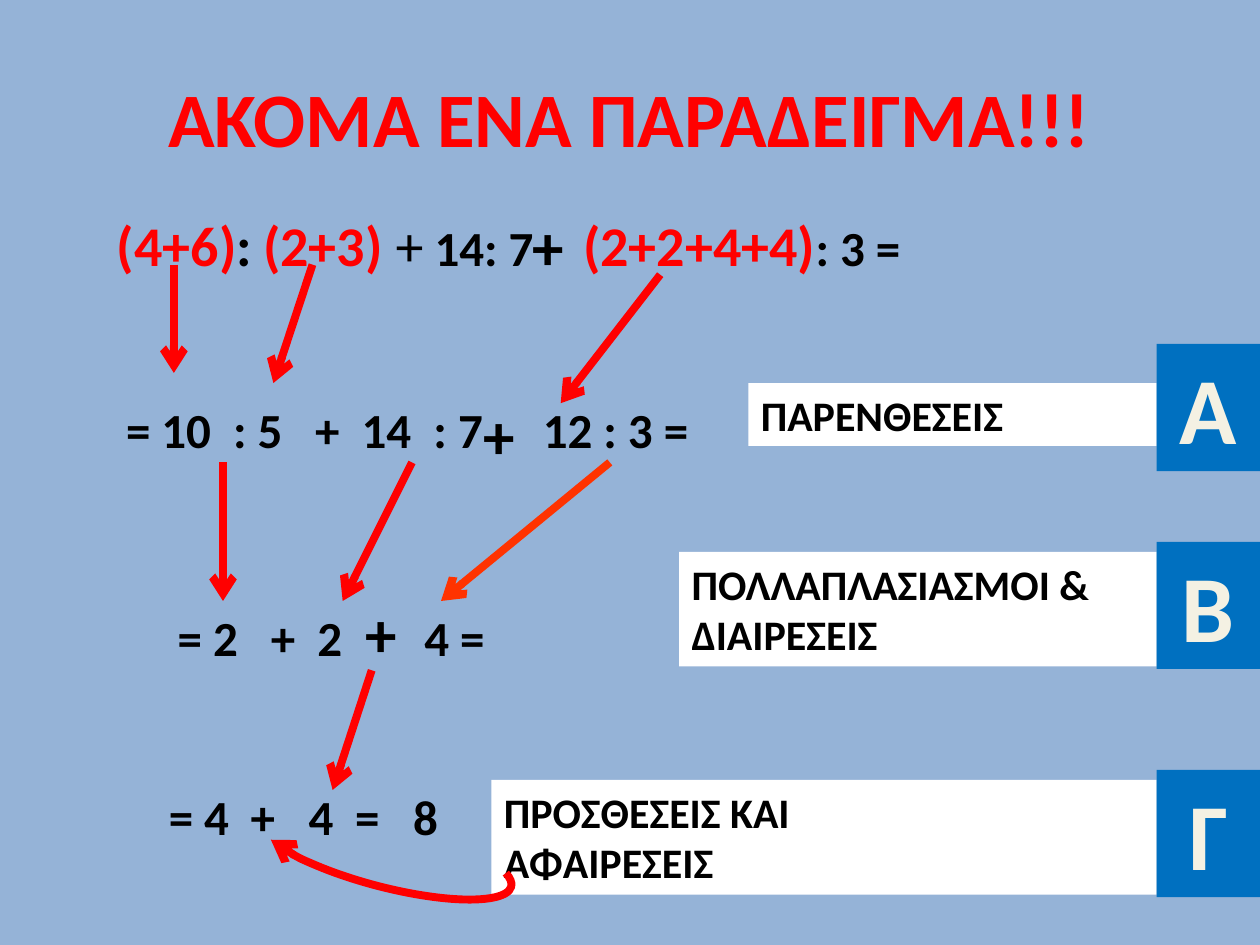
from dataclasses import dataclass

import pptx
import pptx.dml.color
import pptx.enum.shapes
import pptx.enum.text
import pptx.oxml
import pptx.oxml.ns
import pptx.util
from pptx.util import Inches

ANCHOR = pptx.enum.text.MSO_ANCHOR
ALIGN = pptx.enum.text.PP_ALIGN
SHAPE = pptx.enum.shapes.MSO_SHAPE


@dataclass(frozen=True)
class Theme:
    font: str = "Calibri"
    background: str = "95B3D7"
    ink: str = "000000"
    accent: str = "FF0000"
    accent_warm: str = "FF3300"
    label_fill: str = "FFFFFF"
    badge_fill: str = "0070C0"
    badge_ink: str = "F4F1E3"
    title: int = 44
    badge: int = 54
    plus: int = 36
    bracket: int = 32
    step: int = 28
    label: int = 24
    arrow: float = 4.5


THEME = Theme()


def rgb(value):
    return pptx.dml.color.RGBColor.from_string(value)


def add_run(paragraph, text, size, color=THEME.ink, bold=True):
    run = paragraph.add_run()
    run.text = text
    run.font.name = THEME.font
    run.font.size = pptx.util.Pt(size)
    run.font.bold = bold
    run.font.color.rgb = rgb(color)


def add_text(slide, left, top, width, height):
    box = slide.shapes.add_textbox(*map(Inches, (left, top, width, height)))
    box.text_frame.word_wrap = True
    return box.text_frame


def add_title(slide, text):
    title = slide.shapes.title
    title.left, title.top, title.width, title.height = map(Inches, (0.5, 0.3, 9, 1.25))
    title.text_frame.vertical_anchor = ANCHOR.MIDDLE
    heading = title.text_frame.paragraphs[0]
    heading.alignment = ALIGN.CENTER
    add_run(heading, text, THEME.title, THEME.accent)


def add_expression(slide, left, width, parts):
    """Write one part of the opening expression, run by run."""
    line = add_text(slide, left, 1.62, width, 0.64).paragraphs[0]
    for part in parts:
        add_run(line, *part)


def add_step(slide, left, top, width, terms, indent=0.0, stops=()):
    """Write one solving step, with its terms set at tab stops."""
    frame = add_text(slide, left, top, width, 0.57)
    frame.margin_left = Inches(0.1 + indent)
    line = frame.paragraphs[0]
    if stops:
        tabs = pptx.oxml.parse_xml(f"<a:tabLst {pptx.oxml.ns.nsdecls('a')}/>")
        for stop in stops:
            tab = tabs.makeelement(pptx.oxml.ns.qn("a:tab"),
                                   {"pos": str(Inches(stop)), "algn": "l"})
            tabs.append(tab)
        line._p.get_or_add_pPr().append(tabs)
    add_run(line, "\t".join(terms), THEME.step)


def add_plus(slide, left, top):
    frame = add_text(slide, left, top, 0.55, 1.31)
    frame.vertical_anchor = ANCHOR.BOTTOM
    add_run(frame.paragraphs[0], "+", THEME.plus)


def style_arrow(arrow, color):
    arrow.line.color.rgb = rgb(color)
    arrow.line.width = pptx.util.Pt(THEME.arrow)
    arrow.line._get_or_add_ln().append(pptx.oxml.parse_xml(
        f'<a:tailEnd {pptx.oxml.ns.nsdecls("a")} type="arrow"/>'))


def add_arrow(slide, x1, y1, x2, y2, color=THEME.accent):
    arrow = slide.shapes.add_connector(
        pptx.enum.shapes.MSO_CONNECTOR.STRAIGHT, *map(Inches, (x1, y1, x2, y2)))
    style_arrow(arrow, color)
    arrow._element.spPr.append(
        pptx.oxml.parse_xml(f"<a:effectLst {pptx.oxml.ns.nsdecls('a')}/>"))


def add_curved_arrow(slide):
    curve = slide.shapes.add_shape(SHAPE.ARC, *map(Inches, (2.04, 6.52, 2.05, 0.52)))
    curve.adjustments[0] = 104.656
    curve.adjustments[1] = 211.612
    curve.rotation = 194.5
    curve.shadow.inherit = False
    curve.fill.background()
    style_arrow(curve, THEME.accent)


def add_panel(slide, left, top, width, height, fill, lines, size, color, align):
    panel = slide.shapes.add_shape(SHAPE.RECTANGLE, *map(Inches, (left, top, width, height)))
    panel.shadow.inherit = False
    panel.fill.solid()
    panel.fill.fore_color.rgb = rgb(fill)
    panel.line.fill.background()
    frame = panel.text_frame
    frame.word_wrap = True
    frame.vertical_anchor = ANCHOR.TOP
    for index, text in enumerate(lines):
        paragraph = frame.add_paragraph() if index else frame.paragraphs[0]
        paragraph.alignment = align
        add_run(paragraph, text, size, color)


def main():
    deck = pptx.Presentation()
    deck.slide_width, deck.slide_height = Inches(10), Inches(7.5)
    slide = deck.slides.add_slide(deck.slide_layouts[5])
    slide.background.fill.solid()
    slide.background.fill.fore_color.rgb = rgb(THEME.background)

    add_title(slide, "ΑΚΟΜΑ ΕΝΑ ΠΑΡΑΔΕΙΓΜΑ!!!")
    add_expression(slide, 0.83, 3.78, [
        ("(4+6)", THEME.bracket, THEME.accent),
        (":", THEME.bracket),
        (" ", THEME.step, THEME.ink, False),
        ("(2+3) ", THEME.bracket, THEME.accent),
        ("+", THEME.bracket, THEME.ink, False),
        (" ", THEME.step, THEME.ink, False),
        ("14: 7", THEME.step),
    ])
    add_expression(slide, 4.53, 3.46, [
        ("(2+2+4+4)", THEME.bracket, THEME.accent),
        (": 3 =", THEME.step),
    ])

    add_step(slide, 0.28, 3.12, 3.78, ["= 10", ": 5", "+", "14", ": 7"],
             0.62, (0.85, 1.5, 1.87, 2.44))
    add_step(slide, 4.21, 3.12, 3.46, ["12 : 3 ="])
    add_step(slide, 1.22, 4.77, 3.46, ["= 2", "+", "2"], 0.09, (0.74, 1.11))
    add_step(slide, 3.27, 4.77, 3.46, ["4 ="])
    add_step(slide, 1.06, 6.19, 3.54, ["= 4", "+", "4", "=", "8"],
             0.18, (0.65, 1.11, 1.48, 1.94))

    for ends in [(1.38, 2.1, 1.38, 2.96), (2.48, 2.1, 2.17, 3.04),
                 (5.24, 2.18, 4.45, 3.2), (1.77, 3.67, 1.77, 4.77),
                 (3.27, 3.67, 2.72, 4.77), (2.95, 5.32, 2.64, 6.27)]:
        add_arrow(slide, *ends)
    add_arrow(slide, 4.84, 3.67, 3.5, 4.77, THEME.accent_warm)

    badge_left = 9.18
    for letter, badge_top, left, top, height, lines in [
        ("Α", 2.73, 5.94, 3.04, 0.5, ["ΠΑΡΕΝΘΕΣΕΙΣ"]),
        ("Β", 4.3, 5.39, 4.38, 0.91, ["ΠΟΛΛΑΠΛΑΣΙΑΣΜΟΙ & ΔΙΑΙΡΕΣΕΙΣ"]),
        ("Γ", 6.11, 3.9, 6.19, 0.91, ["ΠΡΟΣΘΕΣΕΙΣ ΚΑΙ", "ΑΦΑΙΡΕΣΕΙΣ"]),
    ]:
        add_panel(slide, left, top, badge_left - left, height, THEME.label_fill,
                  lines, THEME.label, THEME.ink, ALIGN.LEFT)
        add_panel(slide, badge_left, badge_top, 0.82, 1.01, THEME.badge_fill,
                  [letter], THEME.badge, THEME.badge_ink, ALIGN.CENTER)

    add_curved_arrow(slide)
    for left, top in [(4.13, 0.99), (3.74, 2.49), (2.8, 4.06)]:
        add_plus(slide, left, top)

    deck.save("out.pptx")


if __name__ == "__main__":
    main()
